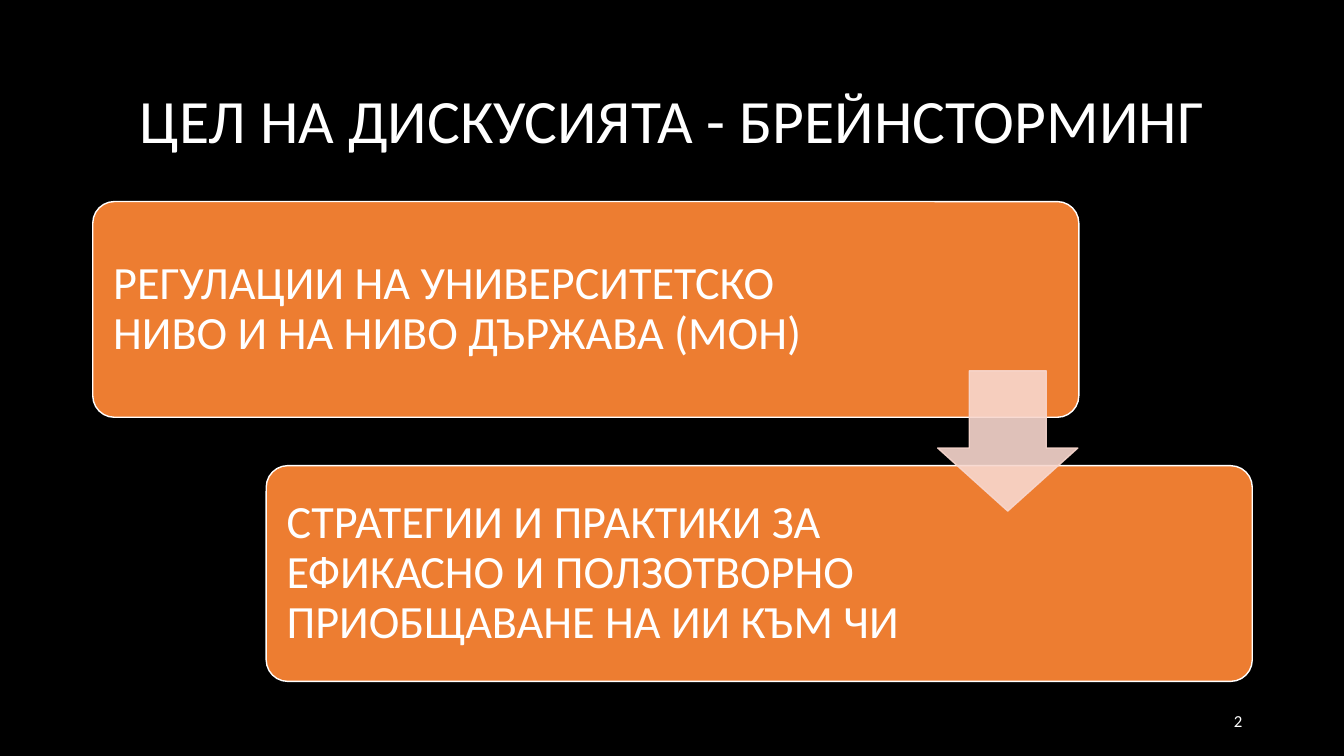
"""Build the slide on the goal of the brainstorming discussion."""
import pptx
import pptx.util
import pptx.dml.color
import pptx.enum.shapes
import pptx.enum.text
import lxml.etree

Inches = pptx.util.Inches
ALIGN = pptx.enum.text.PP_ALIGN
SHAPES = pptx.enum.shapes.MSO_SHAPE
COLOURS = {"background": "000000", "text": "FFFFFF", "card": "ED7D31", "arrow": "F8D7CE"}


def paint(shape, fill, line):
    """Give a shape its fill and outline without a shadow."""
    shape.shadow.inherit = False
    shape.fill.solid()
    shape.fill.fore_color.rgb = pptx.dml.color.RGBColor.from_string(COLOURS[fill])
    shape.line.color.rgb = pptx.dml.color.RGBColor.from_string(COLOURS[line])
    shape.line.width = pptx.util.Pt(1)


def write(shape, text, size, alignment, spacing):
    """Write one vertically centred paragraph into a shape."""
    frame = shape.text_frame
    frame.word_wrap = True
    frame.auto_size = pptx.enum.text.MSO_AUTO_SIZE.NONE
    frame.vertical_anchor = pptx.enum.text.MSO_ANCHOR.MIDDLE
    paragraph = frame.paragraphs[0]
    paragraph.alignment = alignment
    paragraph.line_spacing = spacing
    run = paragraph.add_run()
    run.text = text
    run.font.name = "Calibri"
    run.font.size = pptx.util.Pt(size)
    run.font.color.rgb = pptx.dml.color.RGBColor.from_string(COLOURS["text"])


presentation = pptx.Presentation()
presentation.slide_width = Inches(13.33)
presentation.slide_height = Inches(7.5)
slide = presentation.slides.add_slide(presentation.slide_layouts[5])
slide.background.fill.solid()
slide.background.fill.fore_color.rgb = pptx.dml.color.RGBColor.from_string(COLOURS["background"])

title = slide.shapes.title
title.left, title.top, title.width, title.height = (
    Inches(0.92), Inches(0.61), Inches(11.5), Inches(1.24))
write(title, "ЦЕЛ НА ДИСКУСИЯТА - БРЕЙНСТОРМИНГ", 44, ALIGN.CENTER, 0.9)

cards = [
    ("РЕГУЛАЦИИ НА УНИВЕРСИТЕТСКО НИВО И НА НИВО ДЪРЖАВА (МОН)", 2.24),
    ("СТРАТЕГИИ И ПРАКТИКИ ЗА ЕФИКАСНО И ПОЛЗОТВОРНО ПРИОБЩАВАНЕ НА ИИ КЪМ ЧИ", 3.27),
]
for index, (text, right_margin) in enumerate(cards):
    card = slide.shapes.add_shape(
        SHAPES.ROUNDED_RECTANGLE, Inches(0.92 + 1.72 * index), Inches(2 + 2.62 * index),
        Inches(9.78), Inches(2.14))
    card.adjustments[0] = 0.1
    paint(card, "card", "text")
    frame = card.text_frame
    frame.margin_left = frame.margin_top = frame.margin_bottom = Inches(0.14)
    frame.margin_right = Inches(right_margin)
    write(card, text, 33, ALIGN.LEFT, 0.9)

arrow = slide.shapes.add_shape(
    SHAPES.DOWN_ARROW, Inches(9.3), Inches(3.68), Inches(1.39), Inches(1.39))
arrow.adjustments[0] = 0.55
arrow.adjustments[1] = 0.45
paint(arrow, "arrow", "arrow")
for colour in arrow._element.spPr.iter(pptx.oxml.ns.qn("a:srgbClr")):
    lxml.etree.SubElement(colour, pptx.oxml.ns.qn("a:alpha"), val="90000")

slide_number = slide.shapes.add_textbox(Inches(9.42), Inches(6.95), Inches(3), Inches(0.4))
write(slide_number, "2", 12, ALIGN.RIGHT, 1.0)

presentation.save("out.pptx")
